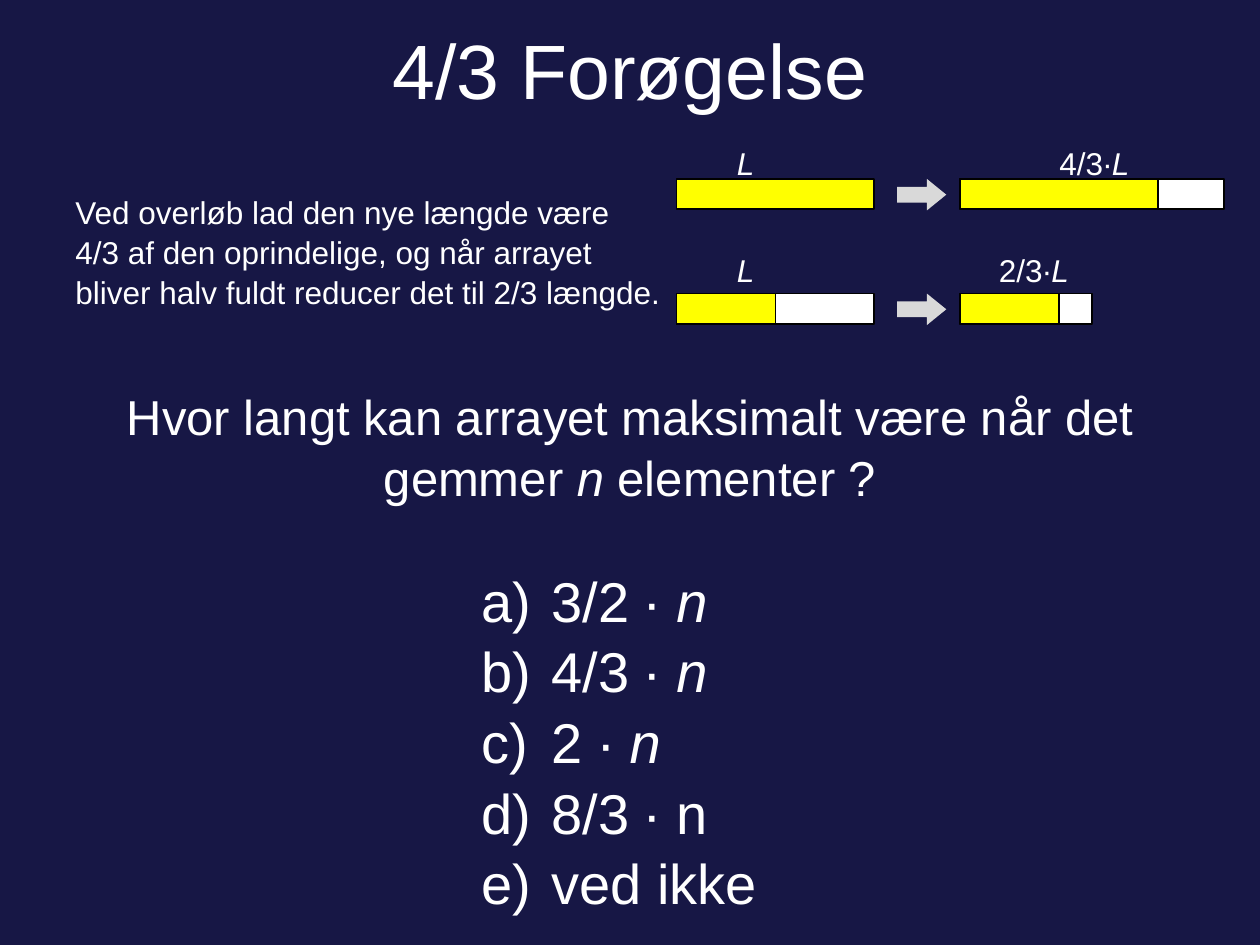
from pptx import Presentation
from pptx.dml.color import RGBColor
from pptx.enum.shapes import MSO_SHAPE
from pptx.enum.text import MSO_ANCHOR, MSO_AUTO_SIZE, PP_ALIGN
from pptx.oxml.ns import qn
from pptx.util import Inches, Pt

WHITE, YELLOW, GREY, BLACK, NAVY = "FFFFFF", "FFFF00", "D9D9D9", "000000", "171745"
ARRAY_LENGTH = 1.57
BAR_HEIGHT = 0.24


def color(hex_string):
    return RGBColor.from_string(hex_string)


def write_text(paragraph, text, size=18, align=PP_ALIGN.LEFT, before=0, after=0, spacing=1.05):
    """Write text in which *asterisks* mark italics and a newline breaks the line."""
    paragraph.alignment = align
    paragraph.space_before, paragraph.space_after = Pt(before), Pt(after)
    paragraph.line_spacing = spacing
    for part_number, part in enumerate(text.split("*")):
        for line_number, line in enumerate(part.split("\n")):
            if line_number:
                paragraph.add_line_break()
            if not line:
                continue
            run = paragraph.add_run()
            run.text = line
            run.font.name, run.font.size = "Arial", Pt(size)
            run.font.italic = part_number % 2 == 1
            run.font.color.rgb = color(WHITE)


def add_text_frame(slide, left, top, width, height):
    text_box = slide.shapes.add_textbox(Inches(left), Inches(top), Inches(width), Inches(height))
    text_box.text_frame.word_wrap = True
    return text_box.text_frame


def add_block(slide, kind, left, top, width, height, fill, line=None):
    shape = slide.shapes.add_shape(kind, Inches(left), Inches(top), Inches(width), Inches(height))
    shape.shadow.inherit = False
    shape.fill.solid()
    shape.fill.fore_color.rgb = color(fill)
    if line:
        shape.line.color.rgb = color(line)
        shape.line.width = Pt(1)
    else:
        shape.line.fill.background()
    return shape


def add_title(slide, text, left, top, width, height):
    title = slide.shapes.title
    title.left, title.top = Inches(left), Inches(top)
    title.width, title.height = Inches(width), Inches(height)
    title.text_frame.auto_size = MSO_AUTO_SIZE.NONE
    title.text_frame.vertical_anchor = MSO_ANCHOR.MIDDLE
    write_text(title.text_frame.paragraphs[0], text, size=44, align=PP_ALIGN.CENTER, spacing=1.0)


def add_question(slide, rule, question, left, top, width, height):
    frame = add_text_frame(slide, left, top, width, height)
    write_text(frame.paragraphs[0], rule, after=36)
    write_text(frame.add_paragraph(), question, size=28, align=PP_ALIGN.CENTER,
               before=5.6, after=12)


def add_array(slide, left, top, length, used):
    """Draw an array whose first part, of the used length, is filled."""
    if used < length:
        add_block(slide, MSO_SHAPE.RECTANGLE, left, top, length, BAR_HEIGHT, WHITE, BLACK)
    add_block(slide, MSO_SHAPE.RECTANGLE, left, top, used, BAR_HEIGHT, YELLOW, BLACK)


def add_resizing(slide, left, top, used, factor, label_top, labels):
    """Draw an array, an arrow and the resized array, with (text, left) labels above."""
    add_array(slide, left, top, ARRAY_LENGTH, used)
    arrow = add_block(slide, MSO_SHAPE.RIGHT_ARROW, left + 1.75, top, 0.39, 0.25, GREY)
    arrow.adjustments[1] = 0.615
    add_array(slide, left + 2.25, top, ARRAY_LENGTH * factor, used)
    for text, label_left in labels:
        frame = add_text_frame(slide, label_left, label_top, 1, 0.4)
        write_text(frame.paragraphs[0], text)


def add_options(slide, options, left, top, width, height):
    frame = add_text_frame(slide, left, top, width, height)
    for number, option in enumerate(options):
        paragraph = frame.add_paragraph() if number else frame.paragraphs[0]
        write_text(paragraph, option, size=32)
        properties = paragraph._p.get_or_add_pPr()
        properties.set("marL", str(Inches(0.56)))
        properties.set("indent", str(-Inches(0.56)))
        bullet = properties.makeelement(qn("a:buAutoNum"), {"type": "alphaLcParenR"})
        properties.append(bullet)


def main():
    presentation = Presentation()
    presentation.slide_width, presentation.slide_height = Inches(10), Inches(7.5)
    slide = presentation.slides.add_slide(presentation.slide_layouts[5])
    slide.background.fill.solid()
    slide.background.fill.fore_color.rgb = color(NAVY)

    add_title(slide, "4/3 Forøgelse", 0, -0.08, 10, 1.25)
    add_question(
        slide,
        "Ved overløb lad den nye længde være\n4/3 af den oprindelige, og når arrayet\n"
        "bliver halv fuldt reducer det til 2/3 længde.",
        "Hvor langt kan arrayet maksimalt være når det gemmer *n* elementer ?",
        0.5, 1.47, 9, 2.7)
    add_resizing(slide, 5.37, 1.42, ARRAY_LENGTH, 4 / 3, 1.08,
                 [("*L*", 5.75), ("4/3∙*L*", 8.31)])
    add_resizing(slide, 5.37, 2.33, ARRAY_LENGTH / 2, 2 / 3, 1.93,
                 [("*L*", 5.75), ("2/3∙*L*", 7.83)])
    add_options(slide, ["3/2 ∙ *n*", "4/3 ∙ *n*", "2 ∙ *n*", "8/3 ∙ n", "ved ikke"],
                3.72, 4.42, 3.11, 2.83)
    presentation.save("out.pptx")


if __name__ == "__main__":
    main()
